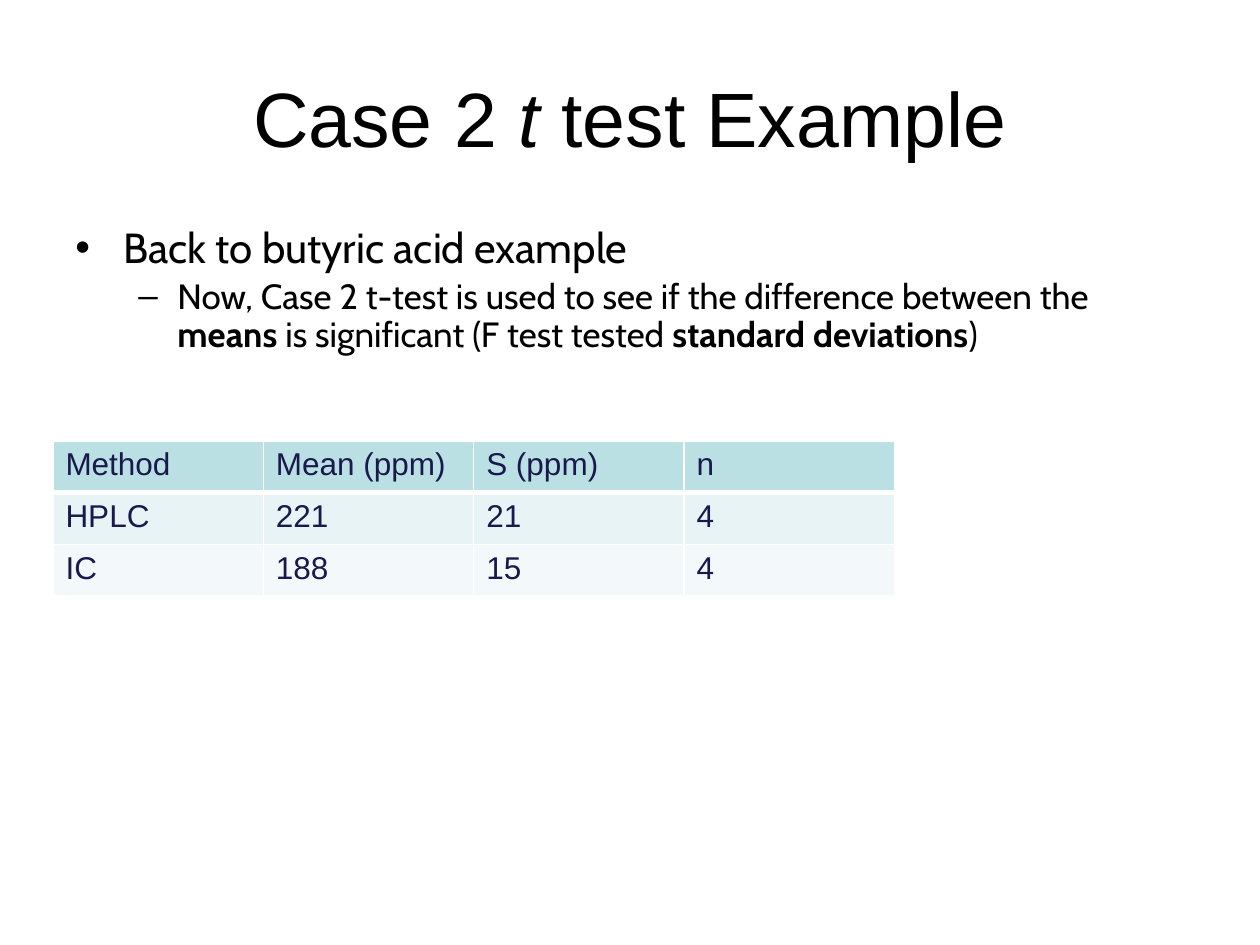
from lxml.etree import SubElement
from pptx import Presentation
from pptx.dml.color import RGBColor
from pptx.enum.text import MSO_ANCHOR, PP_ALIGN
from pptx.oxml.ns import qn
from pptx.util import Inches, Pt

# Content: runs are (text, extra font values)
TITLE = [("Case 2 ", {}), ("t", {"italic": True}), (" test Example", {})]
BODY = [
    {"level": 0, "bullet": "•", "left": 0.38, "hang": 0.38, "size": 24,
     "runs": [("Back to butyric acid example", {})]},
    {"level": 1, "bullet": "–", "left": 0.81, "hang": 0.31, "size": 20,
     "runs": [("Now, Case 2 t-test is used to see if the difference between the ", {}),
              ("means", {"bold": True}),
              (" is significant (F test tested ", {}),
              ("standard deviations", {"bold": True}),
              (")", {})]},
]
ROWS = [
    ("Method", "Mean (ppm)", "S (ppm)", "n"),
    ("HPLC", "221", "21", "4"),
    ("IC", "188", "15", "4"),
]
FILLS = ["BBE0E3", "E7F3F4", "F3F9FA"]
COL_W, ROW_H = 1.67, 0.41


def paint(color, code):
    color.rgb = RGBColor.from_string(code)


def write(para, runs, code, **base):
    for text, extra in runs:
        run = para.add_run()
        run.text = text
        for key, value in {**base, **extra}.items():
            setattr(run.font, key, value)
        paint(run.font.color, code)


def indent(para, left, hang, mark):
    props = para._p.get_or_add_pPr()
    props.set("marL", str(Inches(left)))
    props.set("indent", str(-Inches(hang)))
    SubElement(props, qn("a:buFont"), typeface="Arial")
    SubElement(props, qn("a:buChar"), char=mark)


def edge(cell, base):
    props = cell._tc.get_or_add_tcPr()
    for side, width in {"L": 1, "R": 1, "T": 1, "B": base}.items():
        line = SubElement(props, qn(f"a:ln{side}"), w=str(Pt(width)))
        fill = SubElement(line, qn("a:solidFill"))
        SubElement(fill, qn("a:srgbClr"), val="FFFFFF")


deck = Presentation()
deck.slide_width, deck.slide_height = Inches(10), Inches(7.5)
slide = deck.slides.add_slide(deck.slide_layouts[5])

# Title
title = slide.shapes.title
place = {"left": 0.5, "top": 0.3, "width": 9, "height": 1.25}
for key, value in place.items():
    setattr(title, key, Inches(value))
frame = title.text_frame
frame.vertical_anchor = MSO_ANCHOR.MIDDLE
frame.paragraphs[0].alignment = PP_ALIGN.CENTER
write(frame.paragraphs[0], TITLE, "000000", name="Arial", size=Pt(44))

# Bulleted text
box = slide.shapes.add_textbox(Inches(0.5), Inches(1.75), Inches(9), Inches(4.95))
frame = box.text_frame
frame.word_wrap = True
for i, item in enumerate(BODY):
    para = frame.add_paragraph() if i else frame.paragraphs[0]
    look = {"level": item["level"], "line_spacing": 0.9,
            "space_before": Pt(item["size"] * 0.2)}
    for key, value in look.items():
        setattr(para, key, value)
    indent(para, item["left"], item["hang"], item["bullet"])
    write(para, item["runs"], "000000", name="Cabin", size=Pt(item["size"]))

# Results table
rows, cols = len(ROWS), len(ROWS[0])
table = slide.shapes.add_table(rows, cols, Inches(0.42), Inches(3.5),
                               Inches(COL_W * cols), Inches(ROW_H * rows)).table
for r, (row, tint) in enumerate(zip(ROWS, FILLS)):
    for c, text in enumerate(row):
        cell = table.cell(r, c)
        edge(cell, 1 if r else 3)
        cell.fill.solid()
        paint(cell.fill.fore_color, tint)
        write(cell.text_frame.paragraphs[0], [(text, {})], "19194D",
              name="Arial", size=Pt(18), bold=False)

deck.save("out.pptx")
